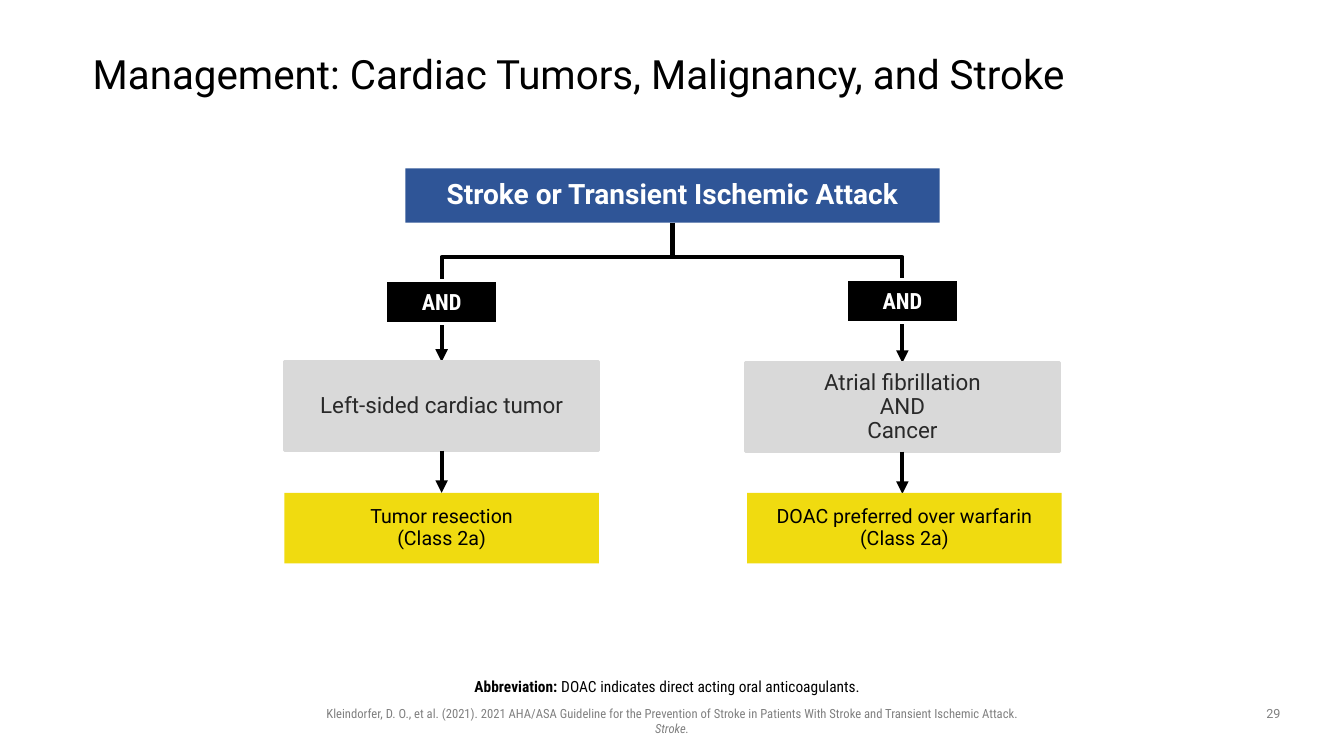
from lxml import etree
from pptx import Presentation
from pptx.dml.color import RGBColor
from pptx.enum import shapes, text
from pptx.oxml import ns
from pptx.util import Inches, Pt

ROBOTO, CONDENSED = "Roboto", "Roboto Condensed"
BLACK, WHITE, GREY, DARK = "000000", "FFFFFF", "808080", "292929"
PALE, YELLOW, BLUE = "D9D9D9", "F0DB10", "2F5597"

TITLE = "Management: Cardiac Tumors, Malignancy, and Stroke"
ROOT = "Stroke or Transient Ischemic Attack"
BRANCHES = [
    dict(x=4.38, and_y=2.78, finding_y=3.59, action_x=4.38,
         finding=["Left-sided cardiac tumor"],
         action=["Tumor resection", "(Class 2a)"]),
    dict(x=8.95, and_y=2.77, finding_y=3.6, action_x=8.97,
         finding=["Atrial fibrillation", "AND", "Cancer"],
         action=["DOAC preferred over warfarin (Class 2a)"]),
]
ABBREVIATION = [("Abbreviation: ", True, False),
                ("DOAC indicates direct acting oral anticoagulants.", False, False)]
CITATION = [("Kleindorfer, D. O., et al. (2021). 2021 AHA/ASA Guideline for the Prevention of "
             "Stroke in Patients With Stroke and Transient Ischemic Attack.\v", False, False),
            ("Stroke.", False, True)]
PAGE = "29"

ROOT_X, ROOT_Y, ROOT_H, SPLIT_Y = 6.67, 1.67, 0.54, 2.55
BOX_W, FINDING_H, ACTION_Y, ACTION_H = 3.12, 0.88, 4.89, 0.7
AND_W, AND_H = 1.11, 0.43
CENTER, LEFT = text.PP_ALIGN.CENTER, text.PP_ALIGN.LEFT


def rgb(value):
    return RGBColor.from_string(value)


def write(sp, paragraphs, size, font, color, align=CENTER, spacing=0.9,
          inset=(0, 0), anchor=text.MSO_ANCHOR.MIDDLE):
    tf = sp.text_frame
    tf.word_wrap = True
    tf.vertical_anchor = anchor
    tf.margin_left = tf.margin_right = Inches(inset[0])
    tf.margin_top = tf.margin_bottom = Inches(inset[1])
    for i, runs in enumerate(paragraphs):
        p = tf.add_paragraph() if i else tf.paragraphs[0]
        p.alignment, p.line_spacing = align, spacing
        for words, bold, italic in runs:
            r = p.add_run()
            r.text = words.rstrip("\v")
            r.font.name, r.font.size = font, Pt(size)
            r.font.bold, r.font.italic = bold, italic
            r.font.color.rgb = rgb(color)
            if words.endswith("\v"):
                p.add_line_break()


def label(s, box, runs, size, font, color, **style):
    sp = s.shapes.add_textbox(*map(Inches, box))
    write(sp, [runs], size, font, color, **style)


def block(s, center, top, width, height, lines, size, fill, color,
          line=None, font=ROBOTO, bold=False, spacing=0.9):
    sp = s.shapes.add_shape(shapes.MSO_SHAPE.RECTANGLE, Inches(center - width / 2),
                            Inches(top), Inches(width), Inches(height))
    sp.shadow.inherit = False
    sp.fill.solid()
    sp.fill.fore_color.rgb = rgb(fill)
    if line:
        sp.line.color.rgb = rgb(line)
        sp.line.width = Pt(2)
    else:
        sp.line.fill.background()
    write(sp, [[(words, bold, False)] for words in lines], size, font, color, spacing=spacing)


def arrow_style(sp):
    sp.line.color.rgb = rgb(BLACK)
    sp.line.width = Pt(3)
    etree.SubElement(sp.line._get_or_add_ln(), ns.qn("a:tailEnd"), type="triangle")


def branch_arrow(s, x, end_y):
    points = [(ROOT_X, SPLIT_Y), (x, SPLIT_Y), (x, end_y)]
    fb = s.shapes.build_freeform(Inches(ROOT_X), Inches(ROOT_Y + ROOT_H))
    fb.add_line_segments([(Inches(a), Inches(b)) for a, b in points], close=False)
    sp = fb.convert_to_shape()
    sp.shadow.inherit = False
    sp.fill.background()
    arrow_style(sp)


def down_arrow(s, x, top, bottom):
    cn = s.shapes.add_connector(shapes.MSO_CONNECTOR.STRAIGHT, Inches(x), Inches(top),
                                Inches(x), Inches(bottom))
    arrow_style(cn)
    etree.SubElement(cn._element.spPr, ns.qn("a:effectLst"))


def main():
    prs = Presentation()
    prs.slide_width, prs.slide_height = Inches(13.33), Inches(7.5)
    s = prs.slides.add_slide(prs.slide_layouts[6])

    label(s, (0.92, 0.4, 11.5, 0.72), [(TITLE, False, False)], 28.8, ROBOTO, BLACK, align=LEFT)

    for b in BRANCHES:
        branch_arrow(s, b["x"], b["finding_y"])
    for b in BRANCHES:
        x, finding_y = b["x"], b["finding_y"]
        finding_end = finding_y + FINDING_H
        block(s, x, b["and_y"], AND_W, AND_H, ["AND"], 16, BLACK, WHITE,
              line=WHITE, font=CONDENSED, bold=True, spacing=1)
        block(s, x, finding_y, BOX_W, FINDING_H, b["finding"], 16, PALE, DARK, line=PALE)
        down_arrow(s, x, finding_end, finding_end + 0.42)
        block(s, b["action_x"], ACTION_Y, BOX_W, ACTION_H, b["action"], 14, YELLOW, BLACK)
    block(s, ROOT_X, ROOT_Y, 5.3, ROOT_H, [ROOT], 20, BLUE, WHITE, bold=True)

    top = text.MSO_ANCHOR.TOP
    label(s, (0.92, 6.69, 11.4, 0.3), ABBREVIATION, 11, CONDENSED, BLACK,
          inset=(0, 0.05), anchor=top)
    label(s, (2.94, 6.95, 7.45, 0.25), CITATION, 9, CONDENSED, GREY,
          spacing=1, inset=(0.1, 0.05), anchor=top)
    label(s, (12.42, 6.95, 0.42, 0.26), [(PAGE, False, False)], 9, ROBOTO, GREY,
          spacing=1, inset=(0.1, 0.05), anchor=top)
    prs.save("out.pptx")


if __name__ == "__main__":
    main()
